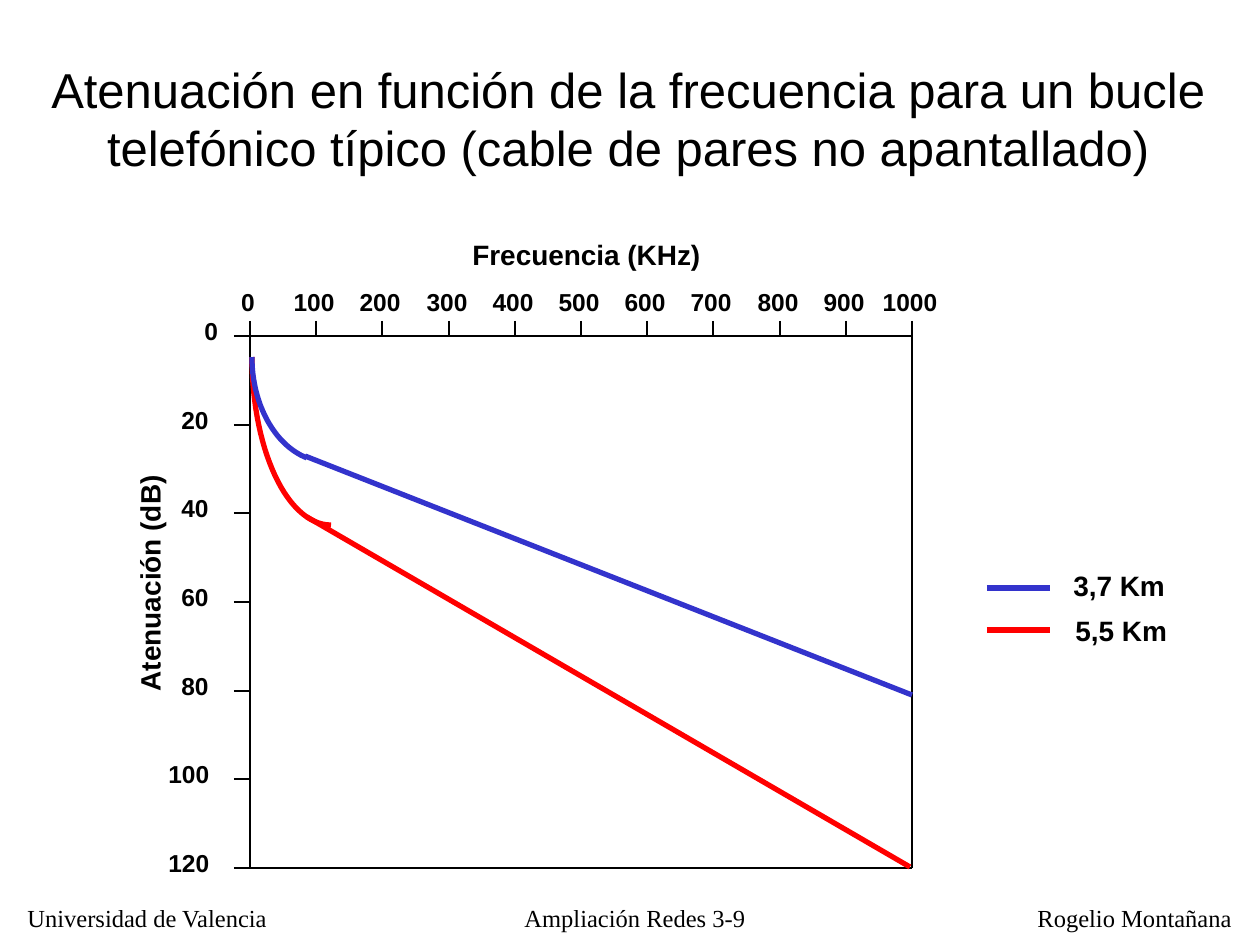
import math

from lxml import etree
from pptx import Presentation
from pptx.dml.color import RGBColor
from pptx.enum.shapes import MSO_CONNECTOR, MSO_SHAPE
from pptx.enum.text import MSO_ANCHOR, MSO_AUTO_SIZE, PP_ALIGN
from pptx.oxml.ns import qn
from pptx.util import Emu, Pt

STRAIGHT, RECTANGLE = MSO_CONNECTOR.STRAIGHT, MSO_SHAPE.RECTANGLE
MIDDLE, TOP = MSO_ANCHOR.MIDDLE, MSO_ANCHOR.TOP
LEFT, CENTER = PP_ALIGN.LEFT, PP_ALIGN.CENTER
NO_AUTOFIT = MSO_AUTO_SIZE.NONE

BLACK = RGBColor(0x00, 0x00, 0x00)
WHITE = RGBColor(0xFF, 0xFF, 0xFF)
RED = RGBColor(0xFF, 0x00, 0x00)
BLUE = RGBColor(0x33, 0x33, 0xCC)

EMU_PER_PX = 914400 / 126
PLOT_LEFT, PLOT_TOP, PLOT_RIGHT, PLOT_BOTTOM = 250, 336, 912, 868
TICK = 16
FREQUENCIES = range(0, 1001, 100)
ATTENUATIONS = range(0, 121, 20)


def px(length):
    return Emu(round(length * EMU_PER_PX))


def write(frame, text, *, size=14, font="Arial", bold=False, align=LEFT,
          anchor=TOP, wrap=False):
    frame.word_wrap = wrap
    frame.auto_size = NO_AUTOFIT
    frame.vertical_anchor = anchor
    paragraph = frame.paragraphs[0]
    paragraph.alignment = align
    run = paragraph.add_run()
    run.text = text
    run.font.size = Pt(size)
    run.font.name = font
    run.font.bold = bold
    run.font.color.rgb = BLACK


class AttenuationSlide:
    """Holds the slide and the line weights of axes and curves."""
    axis_weight = 1.5
    curve_weight = 3

    def __init__(self, slide):
        self.slide = slide
        self.shapes = slide.shapes

    def title(self, text, x, y, width, height):
        title = self.shapes.title
        title.left, title.top = px(x), px(y)
        title.width, title.height = px(width), px(height)
        write(title.text_frame, text, size=28, align=CENTER, anchor=MIDDLE, wrap=True)

    def label(self, text, x, y, width, height, rotation=0, **text_format):
        box = self.shapes.add_textbox(px(x), px(y), px(width), px(height))
        box.rotation = rotation
        write(box.text_frame, text, **text_format)

    def line(self, x1, y1, x2, y2, color=BLACK, weight=axis_weight):
        connector = self.shapes.add_connector(STRAIGHT, px(x1), px(y1), px(x2), px(y2))
        connector.line.color.rgb = color
        connector.line.width = Pt(weight)
        etree.SubElement(connector.element.spPr, qn("a:effectLst"))

    def bend(self, x, y, width, height, color, steps=30):
        """Draw a quarter ellipse that falls from (x, y) and levels out."""
        angles = [math.pi / 2 * step / steps for step in range(steps + 1)]
        points = [(px(x + width * (1 - math.cos(angle))),
                   px(y + height * math.sin(angle))) for angle in angles]
        builder = self.shapes.build_freeform(*points[0])
        builder.add_line_segments(points[1:], close=False)
        curve = builder.convert_to_shape()
        curve.shadow.inherit = False
        curve.fill.background()
        curve.line.color.rgb = color
        curve.line.width = Pt(self.curve_weight)

    def cover(self, x, y, width, height):
        cover = self.shapes.add_shape(RECTANGLE, px(x), px(y), px(width), px(height))
        cover.shadow.inherit = False
        cover.fill.solid()
        cover.fill.fore_color.rgb = WHITE
        cover.line.fill.background()

    def frequency_axis(self):
        step = (PLOT_RIGHT - PLOT_LEFT) / (len(FREQUENCIES) - 1)
        for index, frequency in enumerate(FREQUENCIES):
            x = round(PLOT_LEFT + index * step)
            on_frame = x in (PLOT_LEFT, PLOT_RIGHT)
            self.line(x, PLOT_TOP - TICK + 1, x, PLOT_BOTTOM if on_frame else PLOT_TOP)
            self.label(str(frequency), x - 42, 281, 80, 42, bold=True, align=CENTER)

    def attenuation_axis(self):
        step = (PLOT_BOTTOM - PLOT_TOP) / (len(ATTENUATIONS) - 1)
        for index, attenuation in enumerate(ATTENUATIONS):
            y = round(PLOT_TOP + index * step)
            on_frame = y in (PLOT_TOP, PLOT_BOTTOM)
            self.line(PLOT_LEFT - TICK, y, PLOT_RIGHT if on_frame else PLOT_LEFT, y)
            digits = str(attenuation)
            width = round(26 + 13.3 * len(digits))
            right = 222 if attenuation else 231
            self.label(digits, right - width, y - 26, width, 42, bold=True)


def main():
    presentation = Presentation()
    presentation.slide_width, presentation.slide_height = px(1260), px(945)
    title_only = presentation.slide_layouts[5]
    page = AttenuationSlide(presentation.slides.add_slide(title_only))

    page.title("Atenuación en función de la frecuencia para un bucle "
               "telefónico típico (cable de pares no apantallado)", 20, 53, 1216, 130)

    page.frequency_axis()
    page.attenuation_axis()
    page.label("Frecuencia (KHz)", 460, 231, 254, 47, size=16, bold=True)
    page.label("Atenuación (dB)", 29, 559, 242, 47, rotation=270, size=16, bold=True)

    weight = page.curve_weight
    page.bend(252, 357, 79, 168, RED)
    page.line(307, 517, 910, 867, RED, weight)
    page.bend(252, 357, 76, 105, BLUE)
    page.cover(306, 450, 42, 21)
    page.line(305, 456, 912, 695, BLUE, weight)

    for distance, color, key_y, text_x, text_y in (
            ("3,7 Km", BLUE, 588, 1061, 562), ("5,5 Km", RED, 630, 1063, 607)):
        page.line(987, key_y, 1050, key_y, color, weight)
        page.label(distance, text_x, text_y, 126, 47, size=16, bold=True, wrap=True)

    for text, x, width, align in (
            ("Universidad de Valencia", 15, 268, LEFT),
            ("Ampliación Redes 3-9", 481, 308, CENTER),
            ("Rogelio Montañana", 1025, 220, LEFT)):
        page.label(text, x, 897, width, 42, font="Times New Roman", align=align)

    presentation.save("out.pptx")


if __name__ == "__main__":
    main()
